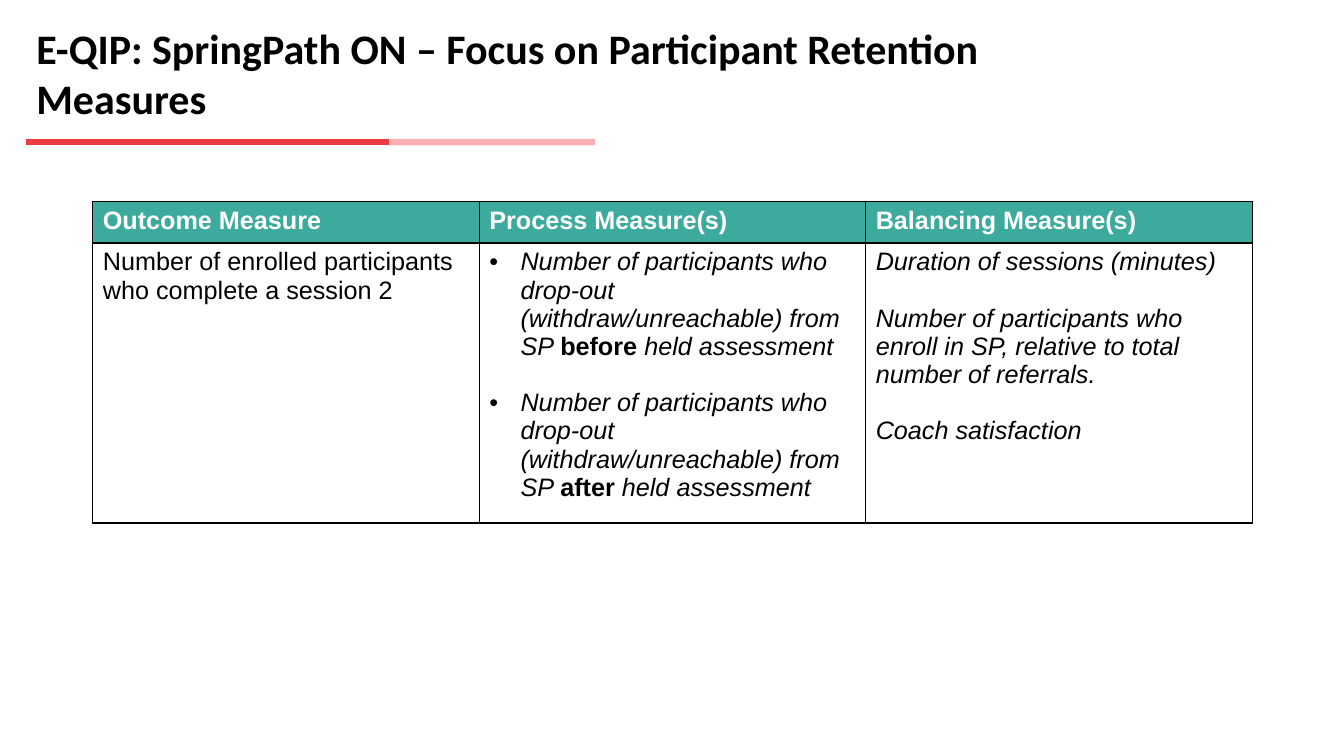
"""Build the slide with the outcome, process and balancing measures."""
import dataclasses

import pptx
import pptx.dml.color
import pptx.enum.shapes
import pptx.enum.text
import pptx.oxml.ns
import pptx.util
from lxml import etree

Inches = pptx.util.Inches
Pt = pptx.util.Pt
RGB = pptx.dml.color.RGBColor
qn = pptx.oxml.ns.qn


@dataclasses.dataclass(frozen=True)
class Theme:
    teal: str = "3CAA9D"
    red: str = "EE3A43"
    black: str = "000000"
    white: str = "FFFFFF"
    title_font: str = "Calibri"
    body_font: str = "Arial"
    title_size: int = 30
    body_size: int = 18
    paragraph_gap: int = 20


theme = Theme()


def style_run(r, font, size, color, bold=False, italic=False):
    r.font.name = font
    r.font.size = Pt(size)
    r.font.color.rgb = RGB.from_string(color)
    r.font.bold = bold
    r.font.italic = italic


def add_border(cell):
    tcPr = cell._tc.get_or_add_tcPr()
    for side in ("a:lnL", "a:lnR", "a:lnT", "a:lnB"):
        ln = etree.SubElement(tcPr, qn(side), w=str(Pt(1)))
        fill = etree.SubElement(ln, qn("a:solidFill"))
        etree.SubElement(fill, qn("a:srgbClr"), val=theme.black)


prs = pptx.Presentation()
prs.slide_width = Inches(13.33)
prs.slide_height = Inches(7.5)
s = prs.slides.add_slide(prs.slide_layouts[5])

title = s.shapes.title
title.left, title.top = Inches(0.26), Inches(0.17)
title.width, title.height = Inches(10.19), Inches(1.11)
tf = title.text_frame
tf.text = "E-QIP: SpringPath ON – Focus on Participant Retention\nMeasures"
tf.word_wrap = True
tf.auto_size = pptx.enum.text.MSO_AUTO_SIZE.SHAPE_TO_FIT_TEXT
tf.vertical_anchor = pptx.enum.text.MSO_ANCHOR.TOP
for p in tf.paragraphs:
    p.alignment = pptx.enum.text.PP_ALIGN.LEFT
    p.space_before = Pt(0)
    for r in p.runs:
        style_run(r, theme.title_font, theme.title_size, theme.black, bold=True)

for start, end, opacity in ((0.26, 3.86, 100), (3.86, 5.9, 40)):
    rule = s.shapes.add_connector(
        pptx.enum.shapes.MSO_CONNECTOR.STRAIGHT,
        Inches(start), Inches(1.41), Inches(end), Inches(1.41))
    rule.line.width = Pt(4.75)
    rule.line.color.rgb = RGB.from_string(theme.red)
    spPr = rule._element.spPr
    etree.SubElement(spPr, qn("a:effectLst"))
    if opacity < 100:
        color = spPr.find(".//" + qn("a:srgbClr"))
        etree.SubElement(color, qn("a:alpha"), val=str(opacity * 1000))

dropouts = "Number of participants who drop-out (withdraw/unreachable) from SP "
measures = [
    ("Outcome Measure", "plain", [
        ["Number of enrolled participants who complete a session 2"]]),
    ("Process Measure(s)", "bullets", [
        [dropouts, "before ", "held assessment"],
        [dropouts, "after", " held assessment"]]),
    ("Balancing Measure(s)", "italic", [
        ["Duration of sessions (minutes)"],
        ["Number of participants who enroll in SP, relative to total number of referrals."],
        ["Coach satisfaction"]]),
]

table = s.shapes.add_table(
    2, len(measures), Inches(0.92), Inches(2), Inches(11.5), Inches(3.03)).table
table.rows[0].height = Inches(0.41)
table.rows[1].height = Inches(2.62)

for col, (heading, kind, paragraphs) in enumerate(measures):
    table.columns[col].width = Inches(11.5 / len(measures))

    head = table.cell(0, col)
    add_border(head)
    head.fill.solid()
    head.fill.fore_color.rgb = RGB.from_string(theme.teal)
    head.text_frame.text = heading
    style_run(head.text_frame.paragraphs[0].runs[0], theme.body_font,
              theme.body_size, theme.white, bold=True)

    body = table.cell(1, col)
    add_border(body)
    body.fill.background()
    tf = body.text_frame
    for i, pieces in enumerate(paragraphs):
        p = tf.add_paragraph() if i else tf.paragraphs[0]
        if i:
            p.space_before = Pt(theme.paragraph_gap)
        if kind == "bullets":
            pPr = p._p.get_or_add_pPr()
            pPr.set("marL", str(Inches(0.31)))
            pPr.set("indent", str(Inches(-0.31)))
            etree.SubElement(pPr, qn("a:buFont"), typeface=theme.body_font)
            etree.SubElement(pPr, qn("a:buChar"), char="•")
        for n, piece in enumerate(pieces):
            r = p.add_run()
            r.text = piece
            stressed = n == 1
            style_run(r, theme.body_font, theme.body_size, theme.black,
                      bold=stressed, italic=kind != "plain" and not stressed)

prs.save("out.pptx")
